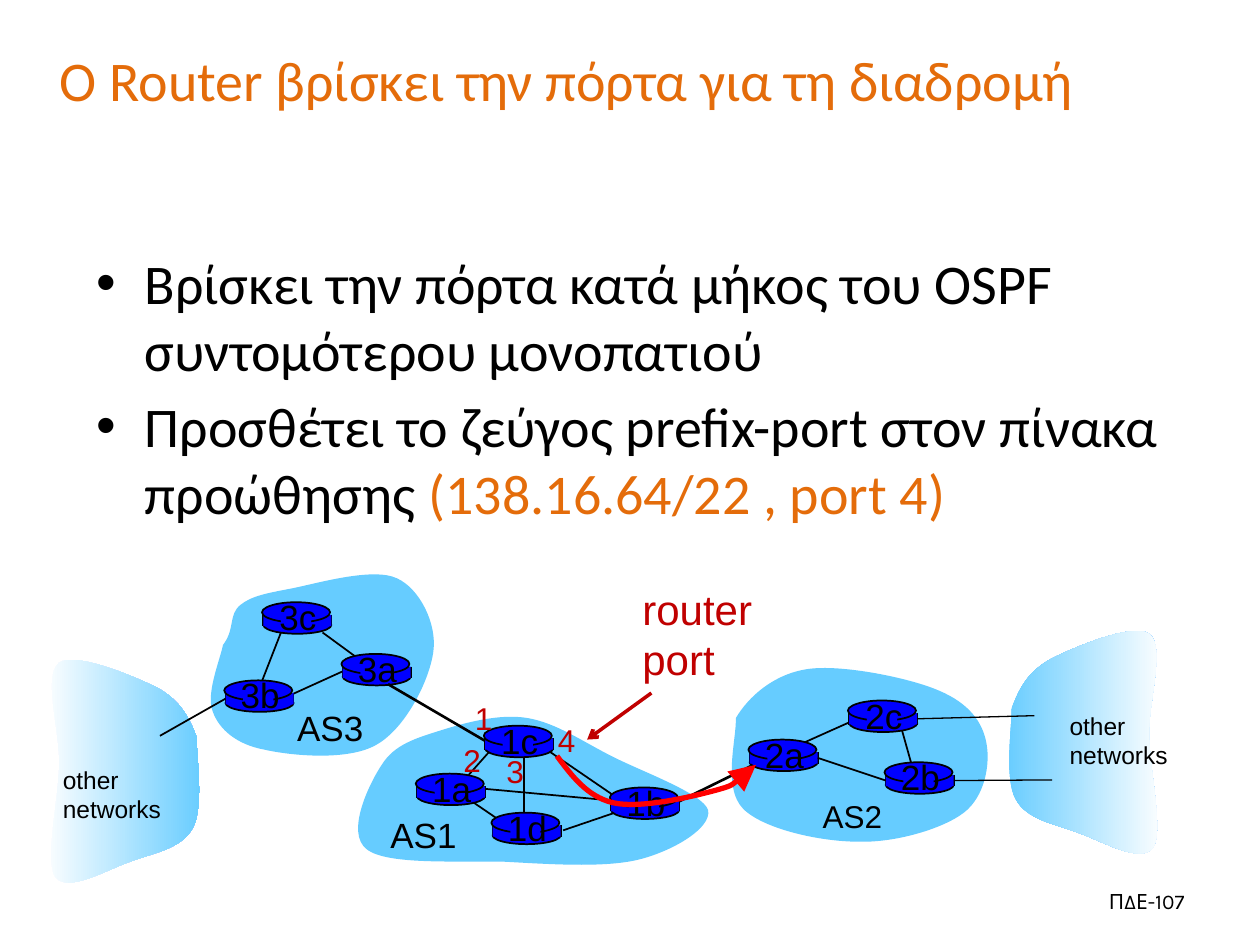
from pptx import Presentation
from pptx.dml.color import RGBColor
from pptx.enum.shapes import MSO_CONNECTOR as CONN, MSO_SHAPE as SHAPE
from pptx.enum.text import MSO_ANCHOR as ANCHOR, PP_ALIGN as ALIGN
from pptx.oxml.ns import qn
from pptx.util import Inches, Pt
from lxml.etree import SubElement

BLACK = RGBColor(0x00, 0x00, 0x00)
WHITE = RGBColor(0xFF, 0xFF, 0xFF)
ORANGE = RGBColor(0xE4, 0x6C, 0x0A)
CRIMSON = RGBColor(0xC0, 0x00, 0x00)
RED = RGBColor(0xFF, 0x00, 0x00)
BLUE = RGBColor(0x00, 0x00, 0xFF)
SKY = RGBColor(0x66, 0xCC, 0xFF)
COLS, ROWS = 100, 75
TOP, LEFT, BOTTOM, RIGHT = range(4)

EAST_CLOUD = [
    (80.3, 56.2), (80.9, 54.6), (81.6, 53.3), (83.4, 52.3),
    (85.2, 51.4), (89.9, 49.4), (91.2, 50.3), (92.5, 51.3), (91.2, 55.4), (91.2, 58.2),
    (91.2, 61), (92.4, 66), (91.5, 67.3), (90.5, 68.6), (87.4, 66.7), (85.6, 66.1),
    (83.8, 65.4), (81.5, 65.1), (80.6, 63.4), (79.7, 61.8), (80.3, 57.7), (80.3, 56.2)]
WEST_CLOUD = [(95.9 - x, y + 2.3) for x, y in EAST_CLOUD]
AS1 = [
    (30.3, 60.7), (31.3, 59.1), (33, 58.6), (34.9, 58), (36.8, 57.4), (39.6, 56.6),
    (41.9, 57), (44.2, 57.4), (46.3, 58.9), (48.7, 60.1), (51.1, 61.3), (55.8, 63),
    (56.2, 64.3), (56.5, 65.7), (53.5, 67.5), (50.8, 68.2), (48.1, 68.9), (43.7, 68.6),
    (40.1, 68.4), (36.5, 68.3), (30.7, 68.7), (29.1, 67.4), (27.4, 66.1), (29.3, 62.2),
    (30.3, 60.7)]
AS2 = [
    (58.4, 57), (59.4, 55.3), (61.4, 53.5), (64.1, 53.1), (66.8, 52.7), (72.2, 53.8),
    (74.5, 54.8), (76.9, 55.8), (78, 57.3), (78.3, 59), (78.6, 60.6), (78.2, 63.2),
    (76.5, 64.5), (74.8, 65.8), (71, 66.9), (68.1, 66.8), (65.1, 66.8), (60.6, 65.8),
    (59, 64.2), (57.3, 62.5), (58.5, 58.5), (58.4, 57)]
AS3 = [
    (17.7, 51.2), (18.7, 49.9), (18.1, 48.8), (19.1, 48), (20, 47.3), (21.1, 47.1),
    (23.2, 46.7), (25.2, 46.3), (29.6, 45), (31.5, 45.9), (33.3, 46.7), (34.7, 49.5),
    (34.4, 51.7), (34.1, 54), (32.2, 57.8), (29.9, 59.1), (27.7, 60.4), (23.2, 60),
    (21, 59.5), (18.8, 59.1), (17.4, 57.9), (16.9, 56.5), (16.3, 55.1), (17.5, 52.3),
    (17.7, 51.2)]
ROUTE = [
    (44.2, 60), (45.4, 61.6), (46.6, 63.2), (48.6, 63.7), (50.7, 64.2), (54.6, 63.3),
    (56.5, 62.8), (58.4, 62.3), (59.2, 61.5), (60, 60.7)]
ROUTERS = {
    "3b": (17.8, 54), "3c": (20.8, 47.8), "3a": (27.1, 51.9),
    "1c": (38.4, 57.6), "1a": (33, 61.4), "1d": (39, 64.5), "1b": (48.4, 62.5),
    "2a": (59.4, 58.7), "2c": (67.3, 55.6), "2b": (70.2, 60.5)}
LINKS = [
    ((23.2, 55.1), (27.6, 53.1)), ((28.2, 52.1), (25.6, 50.2)), ((22.3, 50.2), (20.7, 54.3)),
    ((38.8, 59.7), (37.2, 61.5)), ((41.6, 60.1), (41.6, 65)), ((43.4, 59.5), (48.8, 63.2)),
    ((48.8, 64.5), (44.7, 65.9)), ((48.2, 63.5), (38.4, 62.6)), ((37.3, 63.5), (39.5, 65)),
    ((63, 59.3), (67.7, 57.2)), ((71.6, 58), (72.3, 60.5))]
TRUNKS = [((53.9, 63.6), (59.6, 60.8)), ((30.8, 54.3), (38.5, 58.8))]


def write(p, text, *, size=20, font="Arial", color=BLACK):
    r = p.add_run()
    r.text = text
    r.font.size, r.font.name, r.font.color.rgb = Pt(size), font, color


class Sketch:
    def __init__(self, prs):
        self.s = prs.slides.add_slide(prs.slide_layouts[6])
        self.col, self.row = prs.slide_width / COLS, prs.slide_height / ROWS

    def at(self, x, y):
        return round(x * self.col), round(y * self.row)

    def text(self, x, y, w, h, text="", align=ALIGN.LEFT, anchor=ANCHOR.TOP, wrap=False, **style):
        tf = self.s.shapes.add_textbox(*self.at(x, y), *self.at(w, h)).text_frame
        tf.word_wrap, tf.vertical_anchor = wrap, anchor
        for i, line in enumerate(text.split("\n")):
            p = tf.add_paragraph() if i else tf.paragraphs[0]
            p.alignment = align
            if line:
                write(p, line, **style)
        return tf

    def bullet(self, p, *runs):
        p.space_before = Pt(5)
        pPr = p._p.get_or_add_pPr()
        pPr.set("marL", str(Inches(0.38)))
        pPr.set("indent", str(-Inches(0.38)))
        SubElement(pPr, qn("a:buFont"), typeface="Arial")
        SubElement(pPr, qn("a:buChar"), char="•")
        for text, color in runs:
            write(p, text, size=32, font="Calibri", color=color)

    def stroke(self, sp, color, width, head=None, head_size="med"):
        sp.line.color.rgb, sp.line.width = color, Pt(width)
        if head:
            SubElement(sp.line._get_or_add_ln(), qn("a:tailEnd"),
                       type=head, w=head_size, len=head_size)

    def line(self, start, end, color=BLACK, width=1, head=None, begin_at=None, end_at=None):
        c = self.s.shapes.add_connector(CONN.STRAIGHT, *self.at(*start), *self.at(*end))
        if begin_at:
            c.begin_connect(*begin_at)
        if end_at:
            c.end_connect(*end_at)
        self.stroke(c, color, width, head)
        SubElement(c._element.spPr, qn("a:effectLst"))

    def shape(self, kind, x, y, w, h, outline=False):
        sp = self.s.shapes.add_shape(kind, *self.at(x, y), *self.at(w, h))
        sp.shadow.inherit = False
        sp.fill.solid()
        sp.fill.fore_color.rgb = BLUE
        if outline:
            self.stroke(sp, BLACK, 1)
        else:
            sp.line.fill.background()
        return sp

    def curve(self, points, closed=True):
        first, *rest = [self.at(*pt) for pt in points]
        fb = self.s.shapes.build_freeform(*first)
        fb.add_line_segments(rest, close=closed)
        sp = fb.convert_to_shape()
        sp.shadow.inherit = False
        path = sp._element.find(".//" + qn("a:path"))
        segments = path.findall(qn("a:lnTo"))
        for i in range(0, len(segments), 3):
            bez = SubElement(path, qn("a:cubicBezTo"))
            segments[i].addprevious(bez)
            for seg in segments[i:i + 3]:
                bez.append(seg[0])
                path.remove(seg)
        return sp

    def cloud(self, points, stops=(SKY,)):
        sp = self.curve(points)
        sp.line.fill.background()
        if len(stops) == 1:
            sp.fill.solid()
            sp.fill.fore_color.rgb = stops[0]
            return
        sp.fill.gradient()
        sp.fill.gradient_angle = 0
        for i, color in enumerate(stops):
            stop = sp.fill.gradient_stops[i]
            stop.position, stop.color.rgb = i, color

    def router(self, name, x, y):
        self.shape(SHAPE.OVAL, x + 0.1, y + 1.1, 5.4, 1.4, outline=True)
        for side in (x + 0.1, x + 5.5):
            self.line((side, y + 1), (side, y + 1.9))
        body = self.shape(SHAPE.RECTANGLE, x + 0.1, y + 1, 5.4, 0.9)
        self.shape(SHAPE.OVAL, x, y, 5.4, 1.6, outline=True)
        self.shape(SHAPE.RECTANGLE, x + 1.5, y + 0.2, 2.4, 2.1)
        self.text(x + 0.3, y - 1, 5.1, 4.3, name, align=ALIGN.CENTER)
        return body


def main():
    prs = Presentation()
    prs.slide_width, prs.slide_height = Inches(10), Inches(7.5)
    k = Sketch(prs)

    k.text(2.5, 0, 85, 12.5, "Ο Router βρίσκει την πόρτα για τη διαδρομή", align=ALIGN.CENTER,
           anchor=ANCHOR.MIDDLE, wrap=True, size=32, font="Calibri", color=ORANGE)
    tf = k.text(6.7, 19.2, 90.8, 22.5, wrap=True)
    k.bullet(tf.paragraphs[0],
             ("Βρίσκει την πόρτα κατά μήκος του OSPF συντομότερου μονοπατιού", BLACK))
    k.bullet(tf.add_paragraph(),
             ("Προσθέτει το ζεύγος prefix-port στον πίνακα προώθησης ", BLACK),
             ("(138.16.64/22 , port 4)", ORANGE))

    k.cloud(EAST_CLOUD, (SKY, WHITE))
    k.cloud(WEST_CLOUD, (WHITE, SKY))
    for area in (AS1, AS2, AS3):
        k.cloud(area)
    for start, end in LINKS:
        k.line(start, end)
    body = {name: k.router(name, *xy) for name, xy in ROUTERS.items()}
    k.line((17.8, 55.4), (12.7, 58.4), begin_at=(body["3b"], LEFT))
    k.line((64.9, 60.2), (70.2, 61.9), begin_at=(body["2a"], RIGHT), end_at=(body["2b"], LEFT))
    k.line((72.7, 56.8), (82.1, 56.8), width=0.75, begin_at=(body["2c"], RIGHT))
    k.line((75.5, 61.9), (83.5, 61.9), width=0.75, begin_at=(body["2b"], RIGHT))
    for start, end in TRUNKS:
        k.line(start, end, width=1.5)

    k.text(22.6, 55.6, 7.3, 4.3, "AS3")
    k.text(30, 64.1, 7.3, 4.3, "AS1")
    k.text(64.3, 62.8, 6.7, 4, "AS2", size=18)
    for x, y in ((83.9, 55.9), (4, 60.2)):
        k.text(x, y, 9.8, 5.7, "other\nnetworks", size=14)

    route = k.curve(ROUTE, closed=False)
    route.fill.background()
    k.stroke(route, RED, 3, "triangle", "lg")
    k.text(50, 45.8, 10.9, 9.1, "router\nport", size=24, color=CRIMSON)
    k.line((51.7, 55), (46.6, 58.7), CRIMSON, 2, "arrow")
    for port, xy in {"1": (36.7, 55), "2": (35.8, 58.3),
                     "3": (39.2, 59.2), "4": (43.3, 56.7)}.items():
        k.text(*xy, 3.3, 4, port, size=18, color=CRIMSON)
    k.text(71.7, 69.5, 23.3, 4, "ΠΔΕ-107", align=ALIGN.RIGHT, anchor=ANCHOR.MIDDLE,
           wrap=True, size=12, font="Karla")
    prs.save("out.pptx")


if __name__ == "__main__":
    main()
